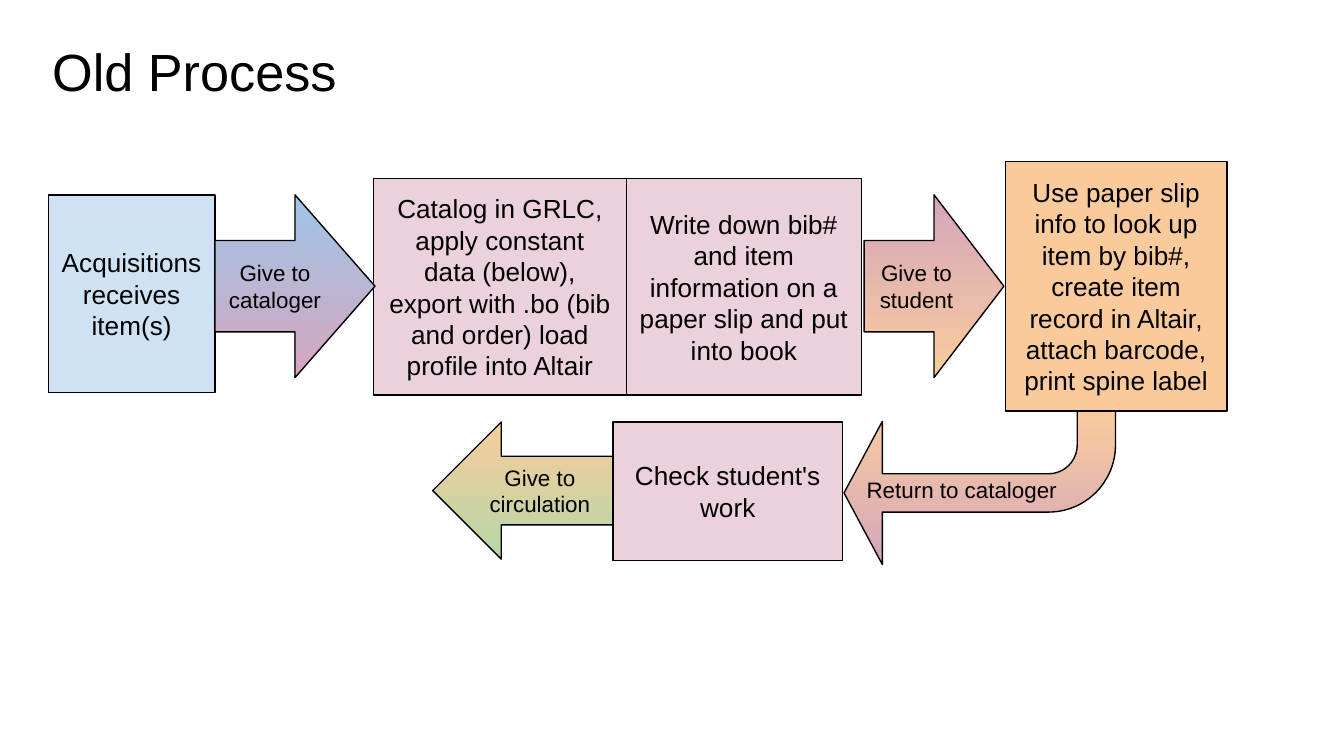
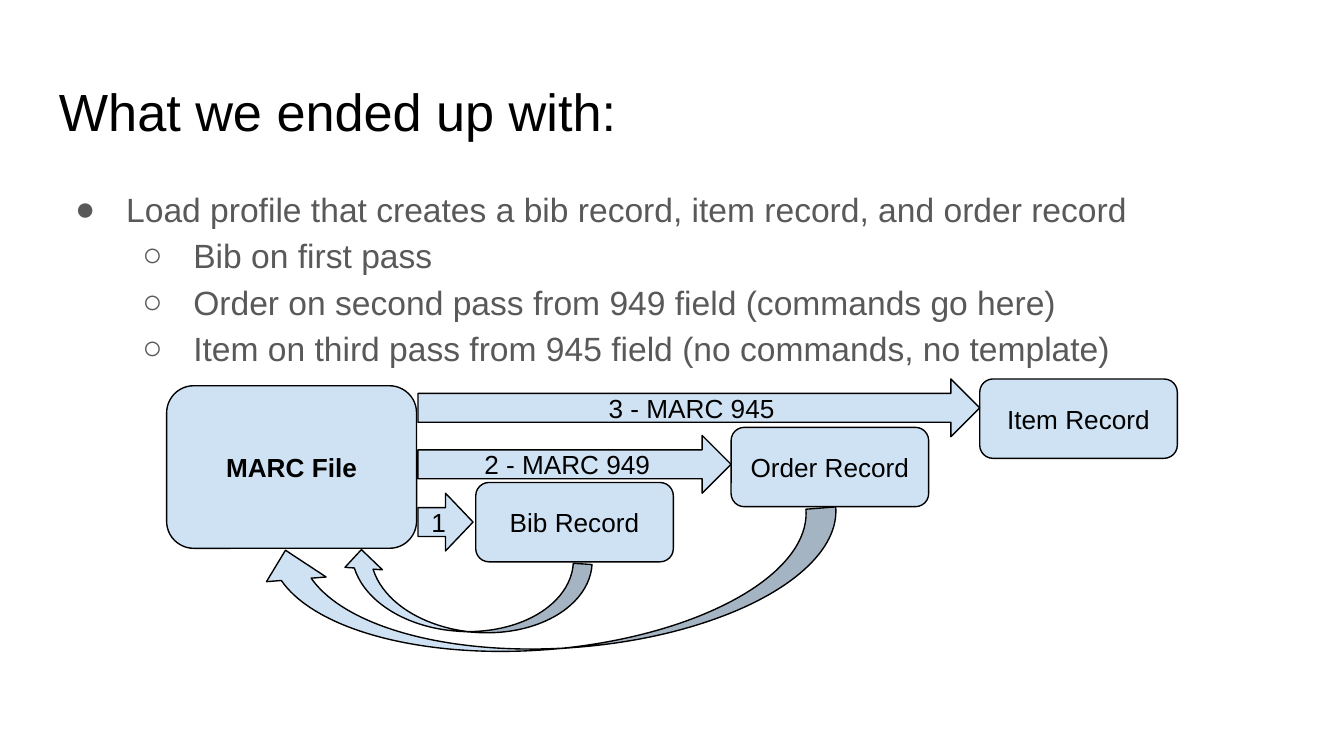
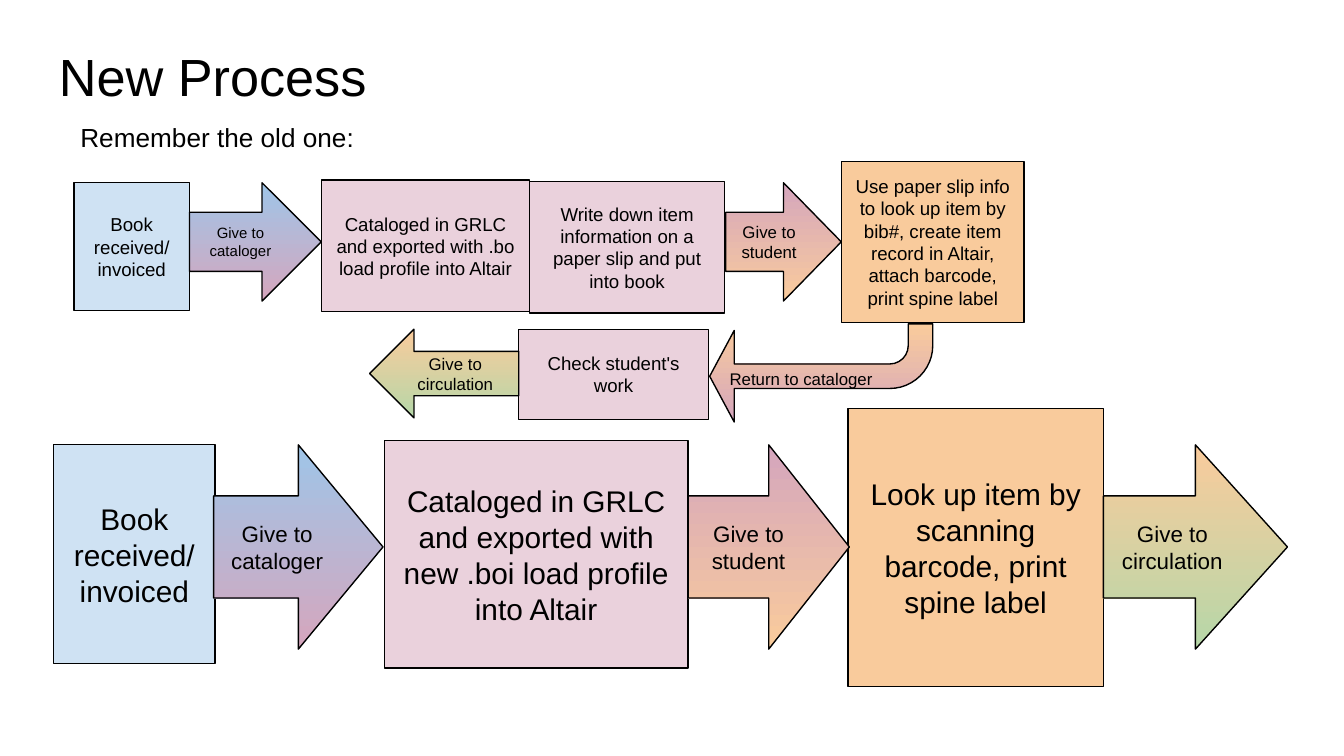
"""Build three slides that compare an old and a new library cataloging process."""
from dataclasses import dataclass

from lxml.etree import SubElement
from pptx import Presentation
from pptx.dml.color import RGBColor
from pptx.enum.shapes import MSO_SHAPE
from pptx.enum.text import MSO_ANCHOR, PP_ALIGN
from pptx.oxml.ns import qn
from pptx.util import Pt

EMU_PER_PX = 9144


@dataclass(frozen=True)
class Theme:
    """Colours, font and type sizes of the deck."""
    font: str = "Arial"
    ink: str = "000000"
    body_ink: str = "595959"
    acquisitions: str = "CFE2F3"
    cataloger: str = "EAD1DC"
    student: str = "F9CB9C"
    to_cataloger: tuple = ("9FC5E8", "D5A6BD")
    to_student: tuple = ("D5A6BD", "F9CB9C")
    to_circulation: tuple = ("F9CB9C", "B6D7A8")
    title_size: int = 28
    body_size: int = 18
    large_size: int = 16
    step_size: int = 14
    handoff_size: int = 12
    small_step_size: int = 10
    small_handoff_size: int = 9
    tiny_size: int = 8
    line_width: float = 0.75
    inset: int = 10


THEME = Theme()


def px(length):
    """Turn whole pixels into EMU."""
    return length * EMU_PER_PX


def set_text(frame, lines, size, ink=THEME.ink, bold=False, align=PP_ALIGN.LEFT):
    """Write paragraphs into a wrapped, inset text frame and format them."""
    frame.word_wrap = True
    frame.margin_left = frame.margin_right = px(THEME.inset)
    frame.margin_top = frame.margin_bottom = px(THEME.inset)
    frame.text = "\n".join(lines)
    for paragraph in frame.paragraphs:
        paragraph.alignment = align
        for run in paragraph.runs:
            run.font.name = THEME.font
            run.font.size = Pt(size)
            run.font.bold = bold
            run.font.color.rgb = RGBColor.from_string(ink)


def add_label(slide, box, lines, size, ink=THEME.ink):
    """Add a text box and return its frame."""
    frame = slide.shapes.add_textbox(*map(px, box)).text_frame
    set_text(frame, lines, size, ink)
    return frame


def add_title(slide, left, top, title):
    """Add the slide title."""
    add_label(slide, (left, top, 932, 63), [title], THEME.title_size)


def add_outlined(slide, preset, box, fill, text="", size=THEME.step_size, bold=False):
    """Add an outlined shape with a flat fill or a top-down two-colour gradient."""
    shape = slide.shapes.add_shape(preset, *map(px, box))
    shape.shadow.inherit = False
    shape.line.color.rgb = RGBColor.from_string(THEME.ink)
    shape.line.width = Pt(THEME.line_width)
    if isinstance(fill, tuple):
        shape.fill.gradient()
        shape.fill.gradient_angle = 270
        for position, colour in enumerate(fill):
            stop = shape.fill.gradient_stops[position]
            stop.color.rgb = RGBColor.from_string(colour)
            stop.position = position
    else:
        shape.fill.solid()
        shape.fill.fore_color.rgb = RGBColor.from_string(fill)
    if text:
        shape.text_frame.vertical_anchor = MSO_ANCHOR.MIDDLE
        set_text(shape.text_frame, [text], size, bold=bold, align=PP_ALIGN.CENTER)
    return shape


def add_steps(slide, steps, size):
    """Add the boxes of a process, each coloured by who does the work."""
    for text, owner, box in steps:
        add_outlined(slide, MSO_SHAPE.RECTANGLE, box, owner, text, size)


def add_handoffs(slide, handoffs):
    """Add the arrows that pass the item on."""
    for text, preset, gradient, box, size in handoffs:
        add_outlined(slide, preset, box, gradient, text, size)


def add_return(slide, arrow_box, label_box, size):
    """Add the bent arrow that leads back to the cataloger."""
    arrow = add_outlined(slide, MSO_SHAPE.BENT_ARROW, arrow_box, THEME.to_student)
    arrow.rotation = 180
    for index, ratio in enumerate((0.25, 0.467, 0.25, 0.438)):
        arrow.adjustments[index] = ratio
    add_label(slide, label_box, ["Return to cataloger"], size)


def add_loop(slide, box, rotation):
    """Add a curved arrow that swings back to the file."""
    loop = add_outlined(slide, MSO_SHAPE.CURVED_UP_ARROW, box, THEME.acquisitions)
    loop.rotation = rotation
    loop._element.spPr.find(qn("a:xfrm")).set("flipH", "1")


def add_bullets(slide, box, items):
    """Add a two-level bulleted list of (level, text) items."""
    frame = add_label(slide, box, [text for _, text in items],
                      THEME.body_size, THEME.body_ink)
    for paragraph, (level, _) in zip(frame.paragraphs, items):
        paragraph.level = level
        paragraph.line_spacing = 1.15
        properties = paragraph._p.get_or_add_pPr()
        properties.set("marL", str(px(50 * (level + 1))))
        properties.set("indent", str(px(-38)))
        colour = SubElement(properties, qn("a:buClr"))
        SubElement(colour, qn("a:srgbClr"), val=THEME.body_ink)
        SubElement(properties, qn("a:buFont"), typeface=THEME.font)
        SubElement(properties, qn("a:buChar"), char="●○"[level])


def build_old_process(slide):
    """Draw the old process."""
    add_title(slide, 29, 19, "Old Process")
    add_steps(slide, [
        ("Acquisitions receives item(s)", THEME.acquisitions, (36, 145, 124, 147)),
        ("Catalog in GRLC, apply constant data (below), export with .bo "
         "(bib and order) load profile into Altair", THEME.cataloger, (278, 133, 188, 161)),
        ("Write down bib# and item information on a paper slip and put into book",
         THEME.cataloger, (466, 133, 175, 161)),
        ("Use paper slip info to look up item by bib#, create item record in Altair, "
         "attach barcode, print spine label", THEME.student, (748, 120, 165, 186)),
        ("Check student's work", THEME.cataloger, (456, 314, 171, 103)),
    ], THEME.step_size)
    size = THEME.handoff_size
    add_handoffs(slide, [
        ("Give to cataloger", MSO_SHAPE.RIGHT_ARROW, THEME.to_cataloger,
         (160, 145, 119, 136), size),
        ("Give to student", MSO_SHAPE.RIGHT_ARROW, THEME.to_student,
         (643, 145, 104, 136), size),
        ("Give to circulation", MSO_SHAPE.LEFT_ARROW, THEME.to_circulation,
         (322, 314, 134, 102), size),
    ])
    add_return(slide, (628, 306, 202, 114), (635, 344, 176, 43), size)


def build_load_profile(slide):
    """Draw the three passes of the load profile."""
    add_title(slide, 34, 49, "What we ended up with:")
    add_bullets(slide, (34, 126, 932, 374), [
        (0, "Load profile that creates a bib record, item record, and order record"),
        (1, "Bib on first pass"),
        (1, "Order on second pass from 949 field (commands go here)"),
        (1, "Item on third pass from 945 field (no commands, no template)"),
    ])
    add_outlined(slide, MSO_SHAPE.ROUNDED_RECTANGLE, (124, 287, 186, 121),
                 THEME.acquisitions, "MARC File", bold=True)
    for record, left, top in (("Bib Record", 354, 359), ("Order Record", 544, 318),
                              ("Item Record", 729, 282)):
        add_outlined(slide, MSO_SHAPE.ROUNDED_RECTANGLE, (left, top, 147, 59),
                     THEME.acquisitions, record)
    add_loop(slide, (253, 414, 186, 56), 3.7)
    add_loop(slide, (193, 394, 433, 89), 355.5)
    for load_pass, top, width in (("1", 367, 41), ("2 - MARC 949", 324, 233),
                                  ("3 - MARC 945", 282, 418)):
        add_outlined(slide, MSO_SHAPE.RIGHT_ARROW, (311, top, width, 43),
                     THEME.acquisitions, load_pass)


def build_new_process(slide):
    """Draw the new process below a small version of the old one."""
    add_title(slide, 34, 23, "New Process")
    add_steps(slide, [
        ("Book received/ invoiced", THEME.acquisitions, (40, 331, 120, 163)),
        ("Cataloged in GRLC and exported with new .boi load profile into Altair",
         THEME.cataloger, (286, 328, 226, 169)),
        ("Look up item by scanning barcode, print spine label",
         THEME.student, (631, 304, 190, 207)),
    ], THEME.large_size)
    add_steps(slide, [
        ("Book received/ invoiced", THEME.acquisitions, (55, 136, 86, 95)),
        ("Cataloged in GRLC and exported with .bo load profile into Altair",
         THEME.cataloger, (239, 134, 155, 98)),
        ("Write down item information on a paper slip and put into book",
         THEME.cataloger, (394, 135, 145, 98)),
        ("Use paper slip info to look up item by bib#, create item record in Altair, "
         "attach barcode, print spine label", THEME.student, (626, 120, 136, 120)),
        ("Check student's work", THEME.cataloger, (386, 245, 141, 67)),
    ], THEME.small_step_size)
    size, small = THEME.handoff_size, THEME.small_handoff_size
    add_handoffs(slide, [
        ("Give to cataloger", MSO_SHAPE.RIGHT_ARROW, THEME.to_cataloger,
         (159, 331, 126, 152), size),
        ("Give to student", MSO_SHAPE.RIGHT_ARROW, THEME.to_student,
         (512, 331, 120, 152), size),
        ("Give to circulation", MSO_SHAPE.RIGHT_ARROW, THEME.to_circulation,
         (821, 331, 137, 152), size),
        ("Give to cataloger", MSO_SHAPE.RIGHT_ARROW, THEME.to_cataloger,
         (141, 136, 98, 88), THEME.tiny_size),
        ("Give to student", MSO_SHAPE.RIGHT_ARROW, THEME.to_student,
         (540, 136, 86, 88), small),
        ("Give to circulation", MSO_SHAPE.LEFT_ARROW, THEME.to_circulation,
         (275, 245, 111, 66), small),
    ])
    add_return(slide, (528, 241, 166, 73), (533, 267, 145, 28), small)
    add_label(slide, (50, 80, 294, 40), ["Remember the old one:"], THEME.step_size)


def main():
    """Build and save the deck."""
    deck = Presentation()
    deck.slide_width = px(1000)
    deck.slide_height = deck.slide_width * 9 // 16
    blank = deck.slide_layouts[6]
    for build in (build_old_process, build_load_profile, build_new_process):
        build(deck.slides.add_slide(blank))
    deck.save("out.pptx")


if __name__ == "__main__":
    main()
